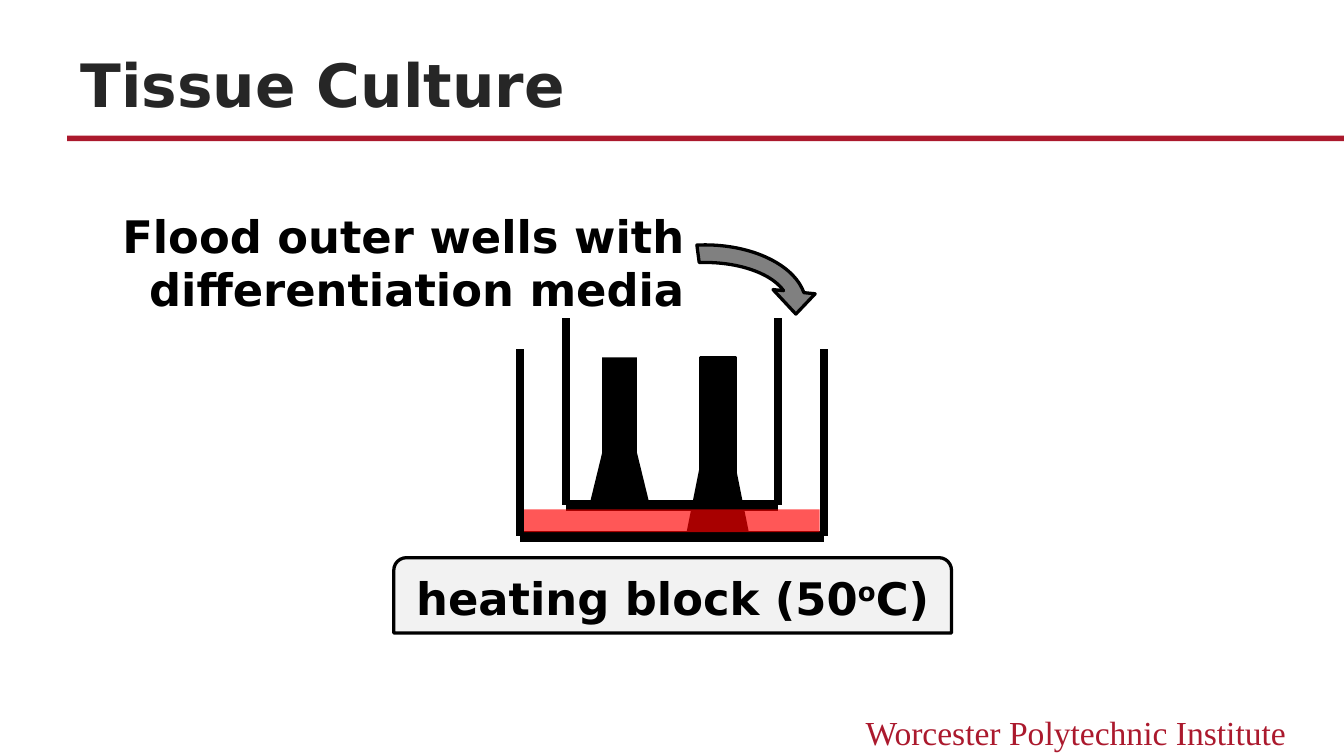
from dataclasses import dataclass

from lxml.etree import SubElement
from pptx import Presentation
from pptx.dml.color import RGBColor
from pptx.enum.shapes import MSO_CONNECTOR, MSO_SHAPE
from pptx.enum.text import MSO_ANCHOR, MSO_AUTO_SIZE, PP_ALIGN
from pptx.oxml.ns import qn
from pptx.util import Inches, Pt

SANS, SERIF = "DejaVu Sans", "Times New Roman"
CRIMSON, BLACK = "AB192D", "000000"


@dataclass
class Grid:
    """A box in inches, divided into equal columns and rows."""
    left: float
    top: float
    width: float
    height: float
    columns: int = 1
    rows: int = 1

    def point(self, column, row):
        return (Inches(self.left + column * self.width / self.columns),
                Inches(self.top + row * self.height / self.rows))

    def area(self, column=0, row=0, columns=None, rows=None):
        columns = self.columns if columns is None else columns
        rows = self.rows if rows is None else rows
        return (*self.point(column, row),
                Inches(columns * self.width / self.columns),
                Inches(rows * self.height / self.rows))


def color(hex_code):
    return RGBColor.from_string(hex_code)


def add_solid(slide, preset, area, fill, outline=None):
    solid = slide.shapes.add_shape(preset, *area)
    solid.shadow.inherit = False
    solid.fill.solid()
    solid.fill.fore_color.rgb = color(fill)
    if outline:
        solid.line.color.rgb = color(outline)
        solid.line.width = Pt(1.75)
    else:
        solid.line.fill.background()
    return solid


def add_wall(slide, start, end, weight):
    wall = slide.shapes.add_connector(MSO_CONNECTOR.STRAIGHT, *start, *end)
    wall.line.color.rgb = color(BLACK)
    wall.line.width = Pt(weight)
    SubElement(wall._element.spPr, qn("a:effectLst"))


def add_run(paragraph, text, size, face=SANS, hex_code=BLACK, bold=True):
    run = paragraph.add_run()
    run.text = text
    run.font.size = Pt(size)
    run.font.name = face
    run.font.bold = bold
    run.font.color.rgb = color(hex_code)
    return run


def add_right_text(slide, grid, text, size, **style):
    frame = slide.shapes.add_textbox(*grid.area()).text_frame
    frame.word_wrap = True
    paragraph = frame.paragraphs[0]
    paragraph.alignment = PP_ALIGN.RIGHT
    add_run(paragraph, text, size, **style)


def add_header(slide, grid):
    # Rule runs from the title's left edge to the slide's right edge
    add_solid(slide, MSO_SHAPE.RECTANGLE, grid.area(0, 73, 95, 4), CRIMSON)
    title = slide.shapes.title
    title.left, title.top, title.width, title.height = grid.area(0, 0, 90, 66)
    frame = title.text_frame
    frame.auto_size = MSO_AUTO_SIZE.NONE
    frame.vertical_anchor = MSO_ANCHOR.BOTTOM
    frame.paragraphs[0].alignment = PP_ALIGN.LEFT
    add_run(frame.paragraphs[0], "Tissue Culture", 32, hex_code="262626")


def add_post(slide, grid, center, rod_rows, foot_top, foot_rows, outline=None):
    for preset, top, columns, rows in (
            (MSO_SHAPE.RECTANGLE, 29, 26, rod_rows),
            (MSO_SHAPE.TRAPEZOID, foot_top, 45, foot_rows)):
        area = grid.area(center - columns / 2, top, columns, rows)
        add_solid(slide, preset, area, BLACK, outline)


def add_well(slide, grid, left, right, top, bottom):
    corners = [grid.point(*corner) for corner in
               ((left, top), (left, bottom), (right, bottom), (right, top))]
    for start, end, weight in zip(corners, corners[1:], (4.5, 6, 4.5)):
        add_wall(slide, start, end, weight)


def add_heating_block(slide, area):
    block = add_solid(slide, MSO_SHAPE.ROUND_2_SAME_RECTANGLE, area, "F2F2F2", BLACK)
    frame = block.text_frame
    frame.vertical_anchor = MSO_ANCHOR.MIDDLE
    paragraph = frame.paragraphs[0]
    paragraph.alignment = PP_ALIGN.CENTER
    add_run(paragraph, "heating block (50", 24)
    degree = add_run(paragraph, "o", 24)
    degree.font._element.set("baseline", "30000")
    add_run(paragraph, "C)", 24)


def add_culture_diagram(slide, grid):
    # Post that reaches the outer well, then both wells, then the short post
    add_post(slide, grid, 147, 96, 106, 56, BLACK)
    add_well(slide, grid, 34, 192, 0, 139)
    add_well(slide, grid, 0, 226, 23, 162)
    add_post(slide, grid, 74, 79, 93, 46)

    add_heating_block(slide, grid.area(-94, 178, 415, 56))

    # Translucent media between the two well floors
    media = add_solid(slide, MSO_SHAPE.RECTANGLE, grid.area(3, 142, 220, 17), "FF0000")
    tint = media._element.spPr.find(qn("a:solidFill"))[0]
    SubElement(tint, qn("a:alpha"), val="66000")

    # Arrow pouring into the outer well
    arrow = add_solid(slide, MSO_SHAPE.CIRCULAR_ARROW,
                      grid.area(53, -64, 169, 108), "808080", BLACK)
    for index, value in enumerate((0.121, 8.516, 210.889, 157.422, 0.146)):
        arrow.adjustments[index] = value


def main():
    deck = Presentation()
    # Widescreen, 16 by 9
    deck.slide_width = Inches(10)
    deck.slide_height = deck.slide_width * 9 // 16
    slide = deck.slides.add_slide(deck.slide_layouts[5])
    add_header(slide, Grid(0.5, 0.28, 9.5, 0.77, 95, 77))
    add_right_text(slide, Grid(6, 5.25, 3.67, 0.4), "Worcester Polytechnic Institute",
                   18, face=SERIF, hex_code=CRIMSON, bold=False)
    add_culture_diagram(slide, Grid(3.87, 2.37, 2.26, 1.62, 226, 162))
    add_right_text(slide, Grid(0, 1.5, 5.19, 0.91),
                   "Flood outer wells with differentiation media", 24)
    deck.save("out.pptx")


if __name__ == "__main__":
    main()
